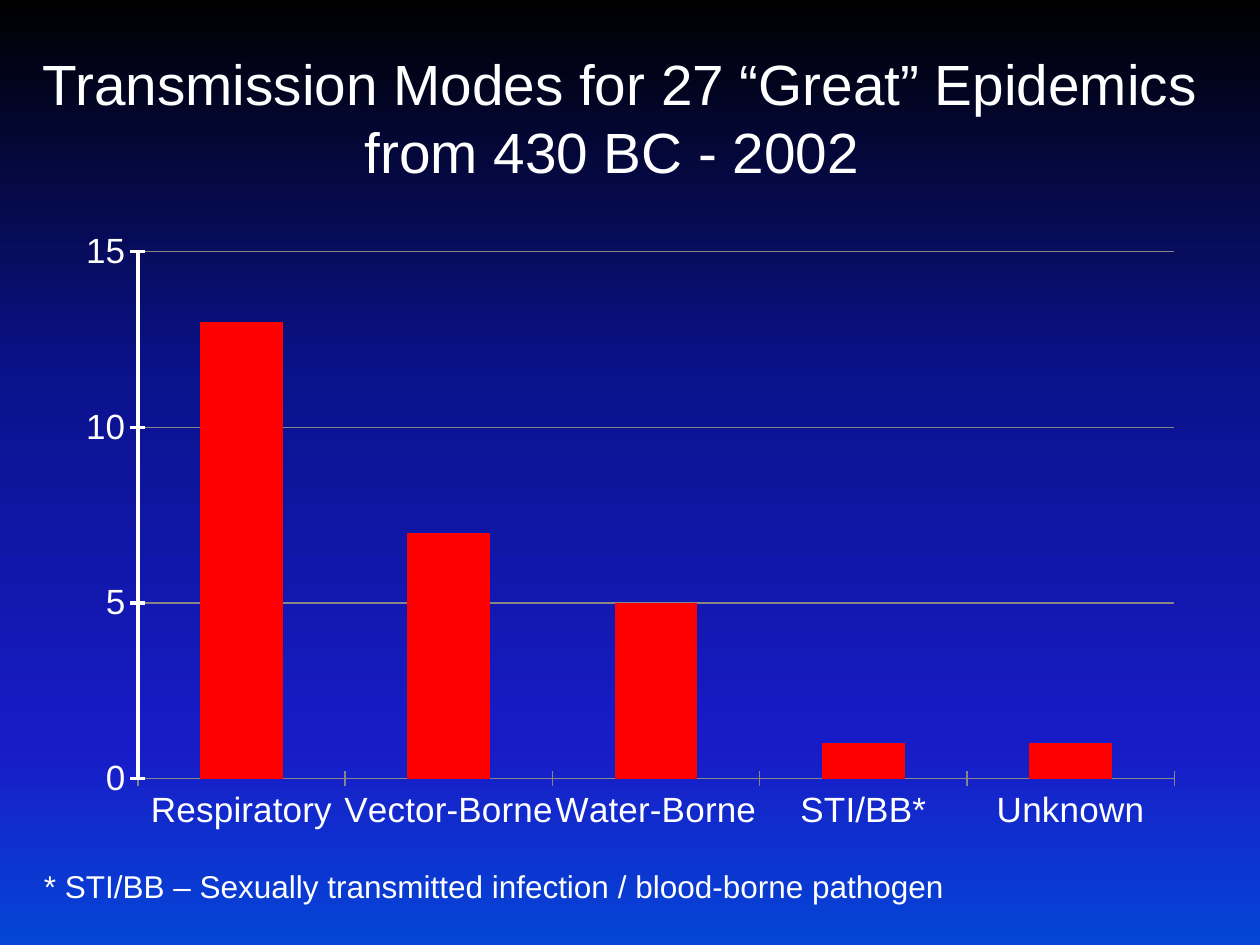
from copy import deepcopy

from lxml import etree
from pptx import Presentation
from pptx.chart.data import CategoryChartData
from pptx.dml.color import RGBColor
from pptx.enum.chart import XL_CHART_TYPE, XL_TICK_MARK
from pptx.enum.text import MSO_ANCHOR, PP_ALIGN
from pptx.oxml.ns import qn
from pptx.util import Inches, Pt

STACKED = XL_CHART_TYPE.COLUMN_STACKED
CROSS = XL_TICK_MARK.CROSS
CENTER, LEFT = PP_ALIGN.CENTER, PP_ALIGN.LEFT
MIDDLE, TOP = MSO_ANCHOR.MIDDLE, MSO_ANCHOR.TOP

WHITE = RGBColor(0xFF, 0xFF, 0xFF)
RED = RGBColor(0xFF, 0x00, 0x00)
GRAY = RGBColor(0x86, 0x86, 0x86)
FONT = "Arial"

TITLE = "Transmission Modes for 27 “Great” Epidemics from 430 BC - 2002 "
FOOTNOTE = "* STI/BB – Sexually transmitted infection / blood-borne pathogen"
EPIDEMICS = {
    "Respiratory": 13,
    "Vector-Borne": 7,
    "Water-Borne": 5,
    "STI/BB*": 1,
    "Unknown": 1,
}
BACKGROUND = [
    (0, RGBColor(0x00, 0x00, 0x00)),
    (40, RGBColor(0x0A, 0x12, 0x8C)),
    (79, RGBColor(0x18, 0x1C, 0xC7)),
    (100, RGBColor(0x04, 0x45, 0xD6)),
]
PLOT_AREA = {"x": 0.066, "y": 0.05, "w": 0.914, "h": 0.845}


def paint_background(page):
    fill = page.background.fill
    fill.gradient()
    fill.gradient_angle = 270
    stop_list = page.element.find(".//" + qn("a:gsLst"))
    for _ in range(len(BACKGROUND) - len(stop_list)):
        stop_list.append(deepcopy(stop_list[0]))
    for stop, (percent, color) in zip(fill.gradient_stops, BACKGROUND):
        stop.position = percent / 100
        stop.color.rgb = color


def style_font(font, size):
    font.name = FONT
    font.size = Pt(size)
    font.color.rgb = WHITE


def add_text(page, text, place, size, align, anchor, wrap):
    box = page.shapes.add_textbox(*map(Inches, place))
    frame = box.text_frame
    frame.word_wrap = wrap
    frame.vertical_anchor = anchor
    para = frame.paragraphs[0]
    para.text = text
    para.alignment = align
    style_font(para.font, size)


def place_plot(chart):
    area = chart.element.find(".//" + qn("c:plotArea"))
    for old in area.findall(qn("c:layout")):
        area.remove(old)
    layout = etree.Element(qn("c:layout"))
    manual = etree.SubElement(layout, qn("c:manualLayout"))
    settings = {"layoutTarget": "inner", "xMode": "edge", "yMode": "edge", **PLOT_AREA}
    for name, value in settings.items():
        etree.SubElement(manual, qn("c:" + name), val=str(value))
    area.insert(0, layout)


def add_epidemic_chart(page):
    data = CategoryChartData()
    data.categories = list(EPIDEMICS)
    data.add_series("Series 1", list(EPIDEMICS.values()))
    place = map(Inches, (0.5, 1.75, 9, 4.95))
    chart = page.shapes.add_chart(STACKED, *place, data).chart
    chart.has_legend = False
    chart.has_title = False
    plot = chart.plots[0]
    plot.gap_width = 150
    plot.overlap = 100
    plot.vary_by_categories = False
    bars = plot.series[0].format.fill
    bars.solid()
    bars.fore_color.rgb = RED

    values = chart.value_axis
    values.minimum_scale, values.maximum_scale, values.major_unit = 0, 15, 5
    values.has_major_gridlines = True
    lines = [
        (values.format.line, WHITE, 2),
        (values.major_gridlines.format.line, GRAY, 0.75),
        (chart.category_axis.format.line, GRAY, 0.75),
    ]
    for line, color, width in lines:
        line.color.rgb = color
        line.width = Pt(width)
    for axis in (values, chart.category_axis):
        axis.major_tick_mark = CROSS
        style_font(axis.tick_labels.font, 20)
    place_plot(chart)


def main():
    deck = Presentation()
    deck.slide_width, deck.slide_height = Inches(10), Inches(7.5)
    page = deck.slides.add_slide(deck.slide_layouts[6])
    paint_background(page)
    add_text(page, TITLE, (0.17, 0.3, 9.5, 1.25), 32.4, CENTER, MIDDLE, True)
    add_epidemic_chart(page)
    add_text(page, FOOTNOTE, (0.25, 6.83, 7.41, 0.4), 18, LEFT, TOP, False)
    deck.save("out.pptx")


if __name__ == "__main__":
    main()
